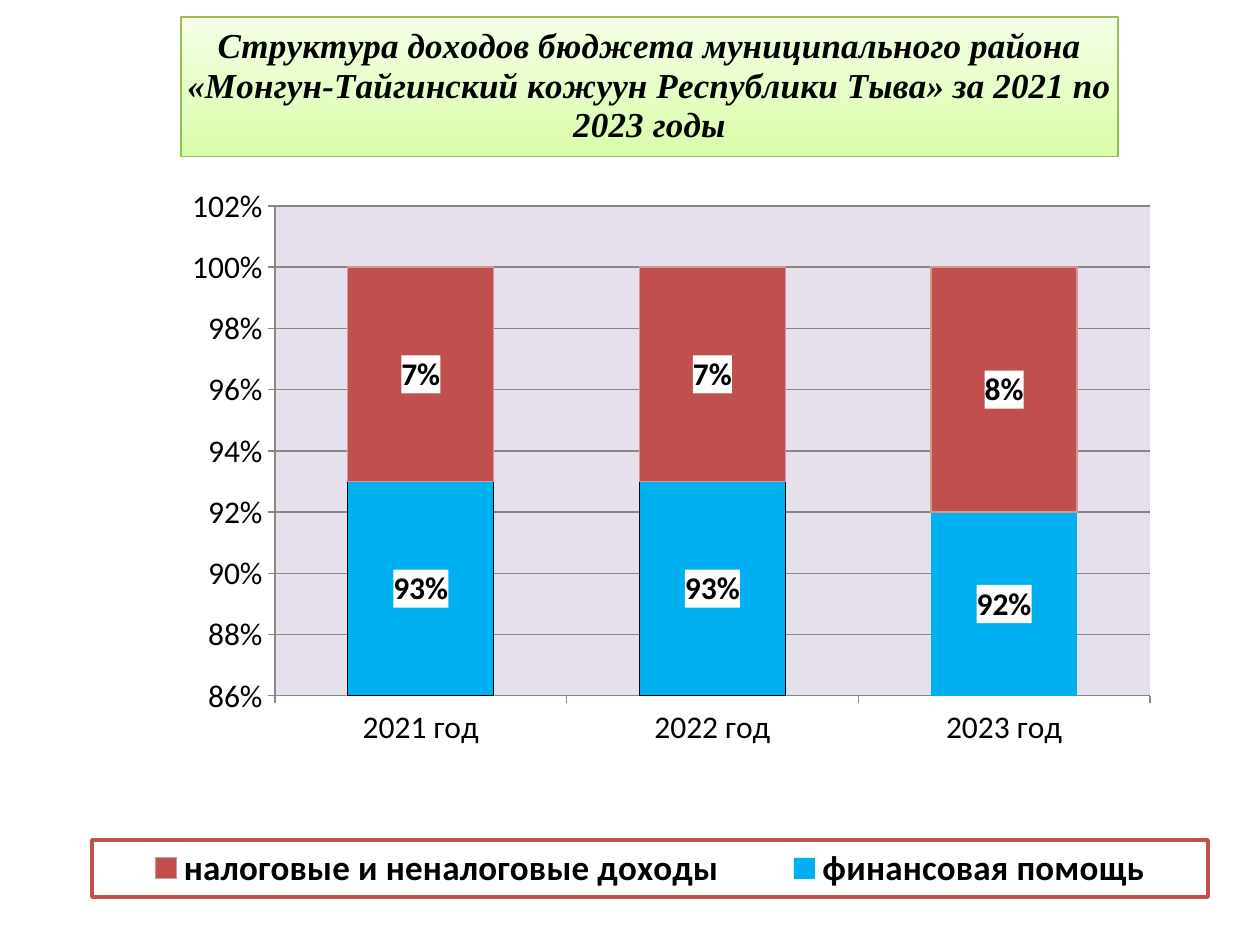
from lxml.etree import SubElement
from pptx import Presentation
from pptx.chart.data import CategoryChartData
from pptx.dml.color import RGBColor
from pptx.enum.chart import XL_CHART_TYPE, XL_LEGEND_POSITION, XL_TICK_MARK
from pptx.oxml import parse_xml
from pptx.oxml.ns import nsdecls, qn
from pptx.util import Pt

PX = 7257
WIDTH, HEIGHT = 1260, 945
BLACK = RGBColor(0x00, 0x00, 0x00)
WHITE = RGBColor(0xFF, 0xFF, 0xFF)
GRAY = RGBColor(0x86, 0x86, 0x86)
BLUE = RGBColor(0x00, 0xB0, 0xF0)
RED = RGBColor(0xC0, 0x50, 0x4D)
PINK = RGBColor(0xD9, 0x96, 0x94)
LAVENDER = RGBColor(0xE6, 0xE0, 0xEC)
GREEN = RGBColor(0x9B, 0xBB, 0x59)
PALE_GREEN = RGBColor(0xF5, 0xFF, 0xE6)
LIGHT_GREEN = RGBColor(0xD9, 0xFD, 0xA9)


def place(element, left, top, width=None, height=None, inner=False):
    for old in element.findall(qn("c:layout")):
        element.remove(old)
    layout = parse_xml(f"<c:layout {nsdecls('c')}/>")
    manual = SubElement(layout, qn("c:manualLayout"))
    settings = [("layoutTarget", "inner")] if inner else []
    settings += [("xMode", "edge"), ("yMode", "edge")]
    settings += [("x", left / WIDTH), ("y", top / HEIGHT)]
    if width:
        settings += [("w", width / WIDTH), ("h", height / HEIGHT)]
    for name, value in settings:
        SubElement(manual, qn(f"c:{name}")).set("val", str(value))
    overlay = element.find(qn("c:overlay"))
    if overlay is None:
        element.insert(0, layout)
    else:
        overlay.addprevious(layout)


def box_properties(fill, line=None):
    outline = "<a:ln><a:noFill/></a:ln>"
    if line:
        outline = f'<a:ln w="25400"><a:solidFill><a:srgbClr val="{line}"/></a:solidFill></a:ln>'
    return parse_xml(
        f"<c:spPr {nsdecls('c', 'a')}><a:solidFill>"
        f'<a:srgbClr val="{fill}"/></a:solidFill>{outline}</c:spPr>'
    )


presentation = Presentation()
presentation.slide_width = WIDTH * PX
presentation.slide_height = HEIGHT * PX
slide = presentation.slides.add_slide(presentation.slide_layouts[6])

chart_data = CategoryChartData(number_format="0%")
chart_data.categories = ["2021 год", "2022 год", "2023 год"]
chart_data.add_series("финансовая помощь", [0.93, 0.93, 0.92])
chart_data.add_series("налоговые и неналоговые доходы", [0.07, 0.07, 0.08])
chart = slide.shapes.add_chart(
    XL_CHART_TYPE.COLUMN_STACKED, 0, 0, WIDTH * PX, HEIGHT * PX, chart_data
).chart
chart.font.name = "Calibri"
chart.font.size = Pt(18)
chart.font.color.rgb = BLACK

title = chart.chart_title
title.text_frame.text = (
    "Структура доходов бюджета муниципального района "
    "«Монгун-Тайгинский кожуун Республики Тыва» за 2021 по 2023 годы"
)
title_font = title.text_frame.paragraphs[0].runs[0].font
title_font.name = "Times New Roman"
title_font.size = Pt(20)
title_font.bold = True
title_font.italic = True
title_font.color.rgb = BLACK
title_fill = title.format.fill
title_fill.gradient()
title_fill.gradient_angle = 270
for stop, color in zip(title_fill.gradient_stops, (PALE_GREEN, LIGHT_GREEN)):
    stop.color.rgb = color
title.format.line.color.rgb = GREEN
title.format.line.width = Pt(0.75)
place(title._element, 181, 17)

plot_area = chart._chartSpace.chart.plotArea
place(plot_area, 275, 206, 875, 490, inner=True)
plot_area.append(box_properties(LAVENDER))

value_axis = chart.value_axis
value_axis.minimum_scale = 0.86
value_axis.maximum_scale = 1.02
value_axis.major_unit = 0.02
value_axis.tick_labels.number_format = "0%"
value_axis.tick_labels.number_format_is_linked = False
value_axis.has_major_gridlines = True
value_axis.major_gridlines.format.line.color.rgb = GRAY
for axis in (chart.category_axis, value_axis):
    axis.major_tick_mark = XL_TICK_MARK.OUTSIDE
    axis.format.line.color.rgb = GRAY

plot = chart.plots[0]
plot.gap_width = 100
plot.overlap = 100
plot.vary_by_categories = False
aid, revenue = plot.series
for series, color in ((aid, BLUE), (revenue, RED)):
    series.format.fill.solid()
    series.format.fill.fore_color.rgb = color
    labels = series.data_labels
    labels.show_value = True
    labels.number_format = "0%"
    labels.number_format_is_linked = False
    labels.font.bold = True
    labels.font.size = Pt(18)
    labels.font.color.rgb = BLACK
    labels._element.find(qn("c:txPr")).addprevious(box_properties(WHITE))
revenue.format.line.color.rgb = PINK
revenue.format.line.width = Pt(0.75)
for index in range(2):
    point = aid.points[index].format
    point.fill.solid()
    point.fill.fore_color.rgb = BLUE
    point.line.color.rgb = BLACK
    point.line.width = Pt(0.75)

chart.has_legend = True
legend = chart.legend
legend.position = XL_LEGEND_POSITION.RIGHT
legend.include_in_layout = False
legend.font.name = "Calibri"
legend.font.size = Pt(20)
legend.font.bold = True
legend.font.color.rgb = BLACK
place(legend._element, 92, 840, 1116, 57)
legend._element.find(qn("c:txPr")).addprevious(box_properties(WHITE, RED))

presentation.save("out.pptx")
